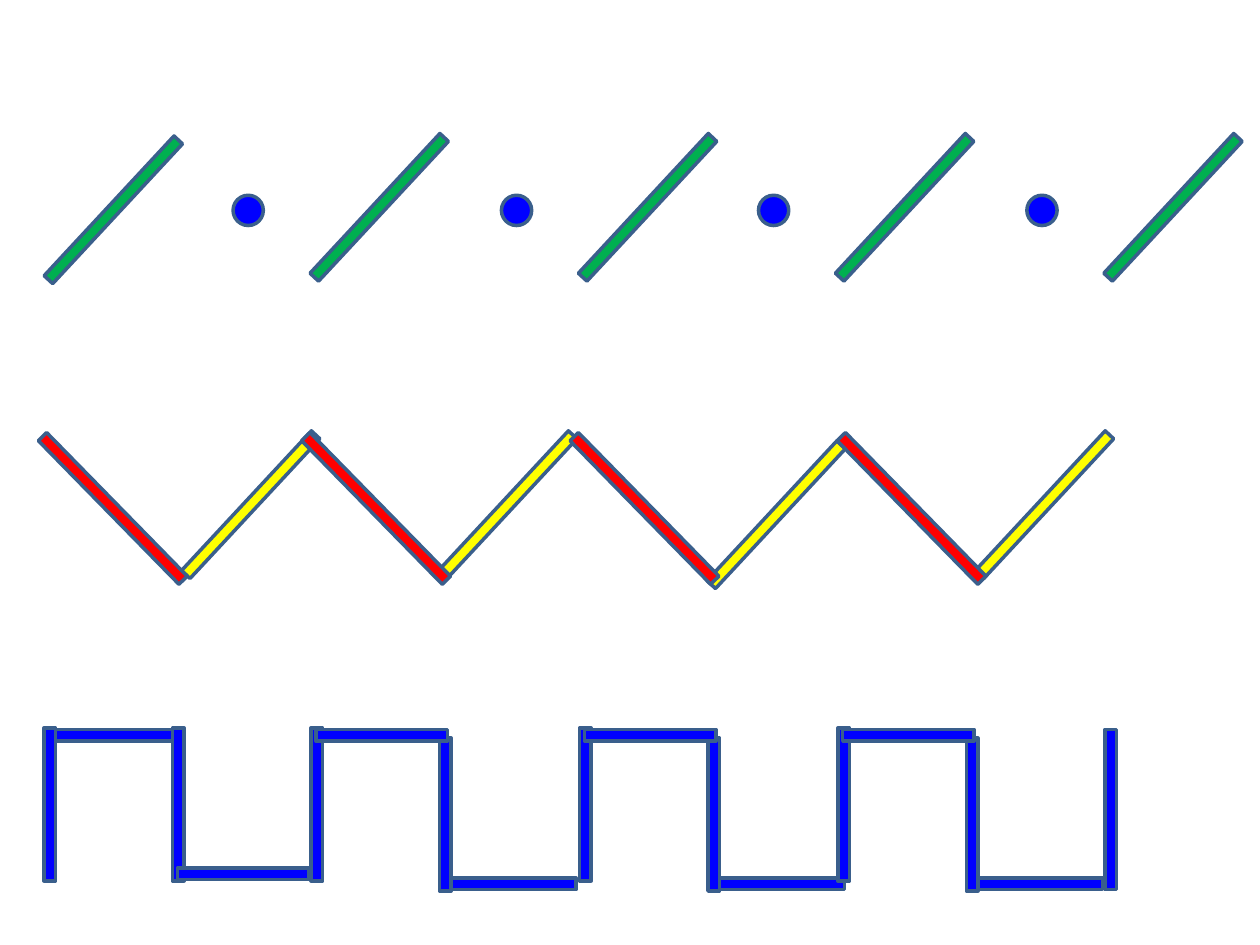
from pptx import Presentation
from pptx.dml.color import RGBColor
from pptx.enum.shapes import MSO_SHAPE
from pptx.util import Inches, Pt

GREEN, BLUE, YELLOW, RED, OUTLINE = "00B050", "0000FF", "FFFF00", "FF0000", "3A5F8C"
BAR_HEIGHT = 0.39
RISING, FALLING, UPRIGHT = 312.9, 225.6, 90


def color(hex_string):
    """Turn a hex string into a colour."""
    return RGBColor.from_string(hex_string)


def add_figure(shapes, kind, left, top, width, height, fill, rotation=0):
    """Add one outlined shape, measured in inches."""
    shape = shapes.add_shape(kind, Inches(left), Inches(top), Inches(width), Inches(height))
    shape.shadow.inherit = False
    shape.rotation = rotation
    shape.fill.solid()
    shape.fill.fore_color.rgb = color(fill)
    shape.line.color.rgb = color(OUTLINE)
    shape.line.width = Pt(2)


def add_bar(shapes, left, top, width, fill, rotation=0):
    """Add a minus sign that serves as a bar."""
    add_figure(shapes, MSO_SHAPE.MATH_MINUS, left, top, width, BAR_HEIGHT, fill, rotation)


def add_slash_dot_row(slide, left, top):
    """Draw green slashes with blue dots between them."""
    for index, offset in enumerate((0, 2.11, 4.24, 6.28, 8.41)):
        drop = 0.02 if index == 0 else 0
        add_bar(slide.shapes, left + offset, top + drop, 2.06, GREEN, RISING)
    for offset in (1.98, 4.11, 6.15, 8.28):
        add_figure(slide.shapes, MSO_SHAPE.FLOWCHART_CONNECTOR,
                   left + offset, top + 0.1, 0.24, 0.24, BLUE)


def add_zigzag_row(slide, left, top):
    """Draw a zigzag of red falling and yellow rising bars."""
    shapes = slide.shapes.add_group_shape().shapes
    for offset, drop in ((1.15, 0), (3.19, 0), (5.32, 0.08), (7.45, 0)):
        add_bar(shapes, left + offset, top + drop, 2.06, YELLOW, RISING)
    for offset in (0, 2.09, 4.22, 6.34):
        add_bar(shapes, left + offset, top + 0.03, 2.17, RED, FALLING)


def add_meander_row(slide, left, top):
    """Draw a square wave of blue bars."""
    shapes = slide.shapes.add_group_shape().shapes
    middle = top + 0.55
    add_bar(shapes, left + 0.63, top, 1.42, BLUE)
    add_bar(shapes, left + 1.02, middle, 1.65, BLUE, UPRIGHT)
    add_bar(shapes, left + 1.65, top + 1.1, 1.42, BLUE)
    for offset in (2.12, 4.25, 6.3):
        start = left + offset
        add_bar(shapes, start + 1.65, top + 1.18, 1.42, BLUE)
        add_bar(shapes, start, middle, 1.65, BLUE, UPRIGHT)
        add_bar(shapes, start + 1.02, middle + 0.08, 1.65, BLUE, UPRIGHT)
        add_bar(shapes, start + 0.63, top, 1.42, BLUE)
    add_bar(shapes, left + 8.38, middle + 0.04, 1.73, BLUE, UPRIGHT)
    add_bar(shapes, left, middle, 1.65, BLUE, UPRIGHT)


def main():
    """Build the slide of three line patterns."""
    presentation = Presentation()
    presentation.slide_width, presentation.slide_height = Inches(10), Inches(7.5)
    slide = presentation.slides.add_slide(presentation.slide_layouts[6])
    add_slash_dot_row(slide, -0.13, 1.45)
    add_zigzag_row(slide, -0.19, 3.81)
    add_meander_row(slide, -0.43, 5.64)
    presentation.save("out.pptx")


if __name__ == "__main__":
    main()
